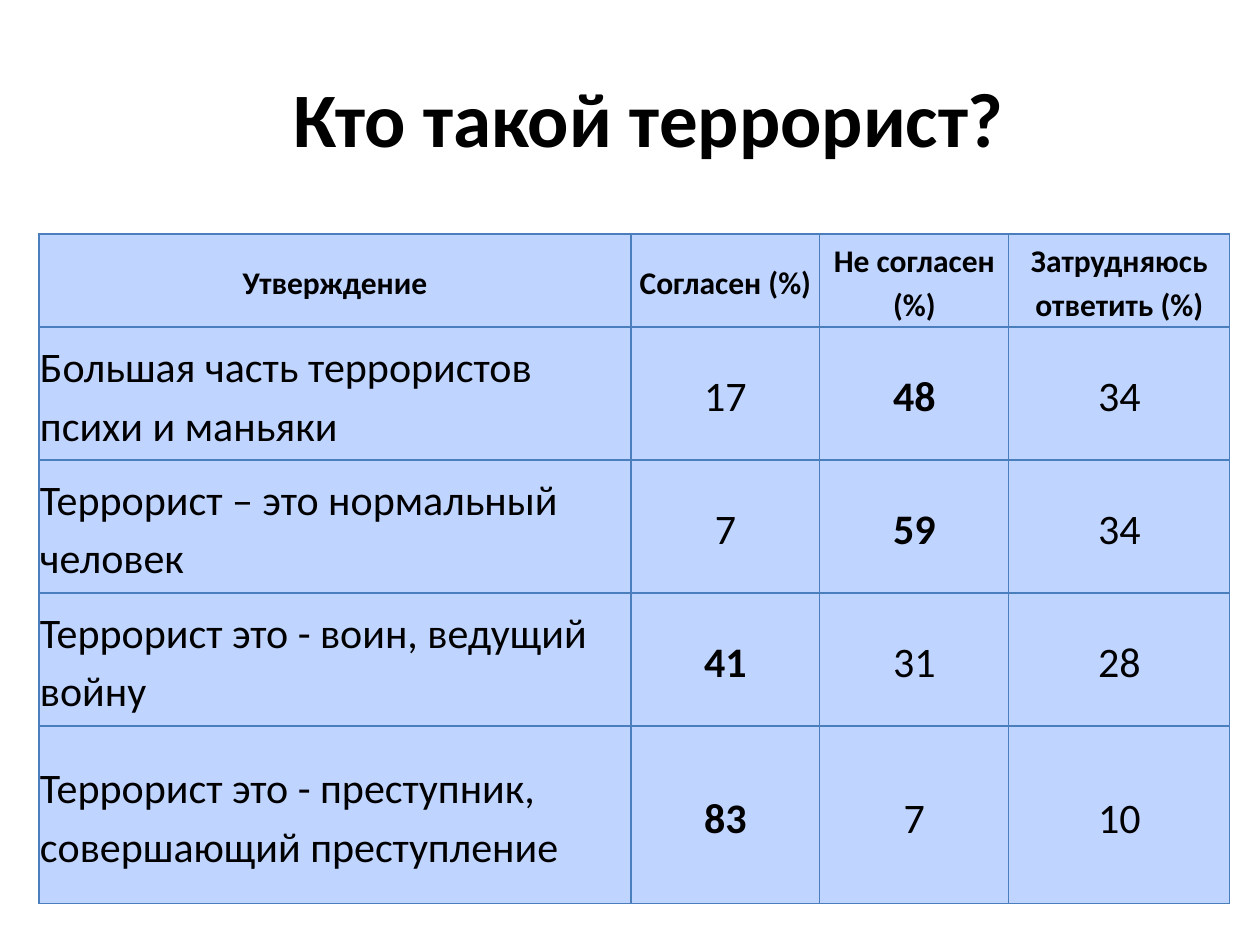
from dataclasses import dataclass

from lxml import etree
from pptx import Presentation
from pptx.dml.color import RGBColor
from pptx.enum.text import MSO_ANCHOR, PP_ALIGN
from pptx.oxml.ns import qn
from pptx.util import Emu, Pt

PX = 914400 // 126
MIDDLE = MSO_ANCHOR.MIDDLE
LEFT, CENTER = PP_ALIGN.LEFT, PP_ALIGN.CENTER


@dataclass(frozen=True)
class Theme:
    font: str = "Calibri"
    text: str = "000000"
    cell: str = "BFD4FF"
    border: str = "4B7EBC"
    title_size: int = 44
    header_size: int = 18
    body_size: int = 24
    border_width: float = 0.75


THEME = Theme()

COLUMN_WIDTHS = [592, 189, 189, 221]
ROW_HEIGHTS = [93, 133, 133, 133, 178]
HEADERS = ["Утверждение", "Согласен (%)", "Не согласен (%)", "Затрудняюсь ответить (%)"]
ANSWERS = [
    ("Большая часть террористов психи и маньяки", 17, 48, 34),
    ("Террорист – это нормальный человек", 7, 59, 34),
    ("Террорист это - воин, ведущий войну", 41, 31, 28),
    ("Террорист это - преступник, совершающий преступление", 83, 7, 10),
]


def px(length):
    return Emu(length * PX)


def write(frame, text, size, bold, align):
    paragraph = frame.paragraphs[0]
    paragraph.text = text
    paragraph.alignment = align
    font = paragraph.font
    font.name, font.size, font.bold = THEME.font, Pt(size), bold
    font.color.rgb = RGBColor.from_string(THEME.text)
    return paragraph


def add_title(slide, text, left, top, width, height):
    box = slide.shapes.add_textbox(px(left), px(top), px(width), px(height))
    frame = box.text_frame
    frame.word_wrap = True
    frame.vertical_anchor = MIDDLE
    write(frame, text, THEME.title_size, True, CENTER)


def add_borders(cell):
    properties = cell._tc.get_or_add_tcPr()
    for index, side in enumerate(("a:lnL", "a:lnR", "a:lnT", "a:lnB")):
        line = etree.Element(qn(side), w=str(Pt(THEME.border_width)))
        fill = etree.SubElement(line, qn("a:solidFill"))
        etree.SubElement(fill, qn("a:srgbClr"), val=THEME.border)
        properties.insert(index, line)


def fill_cell(cell, text, size, bold, align):
    cell.fill.solid()
    cell.fill.fore_color.rgb = RGBColor.from_string(THEME.cell)
    add_borders(cell)
    cell.vertical_anchor = MIDDLE
    cell.margin_left = cell.margin_right = px(1)
    cell.margin_top = cell.margin_bottom = px(1)
    paragraph = write(cell.text_frame, text, size, bold, align)
    paragraph.line_spacing = 1.15
    paragraph.space_after = Pt(10)


def add_survey_table(slide, left, top):
    table = slide.shapes.add_table(
        len(ROW_HEIGHTS), len(COLUMN_WIDTHS), px(left), px(top),
        px(sum(COLUMN_WIDTHS)), px(sum(ROW_HEIGHTS)),
    ).table
    table.first_row = table.horz_banding = False
    for column, width in zip(table.columns, COLUMN_WIDTHS):
        column.width = px(width)
    for row, height in zip(table.rows, ROW_HEIGHTS):
        row.height = px(height)

    # Header row
    for index, header in enumerate(HEADERS):
        fill_cell(table.cell(0, index), header, THEME.header_size, True, CENTER)

    # Statements, with the leading answer of each in bold
    for row_index, (statement, *shares) in enumerate(ANSWERS, start=1):
        fill_cell(table.cell(row_index, 0), statement, THEME.body_size, False, LEFT)
        for column_index, share in enumerate(shares, start=1):
            fill_cell(table.cell(row_index, column_index), str(share),
                      THEME.body_size, share == max(shares), CENTER)


def main():
    presentation = Presentation()
    presentation.slide_width, presentation.slide_height = px(1260), px(945)
    slide = presentation.slides.add_slide(presentation.slide_layouts[6])
    add_title(slide, "Кто такой террорист?", 82, 38, 1134, 157)
    add_survey_table(slide, 39, 234)
    presentation.save("out.pptx")


if __name__ == "__main__":
    main()
